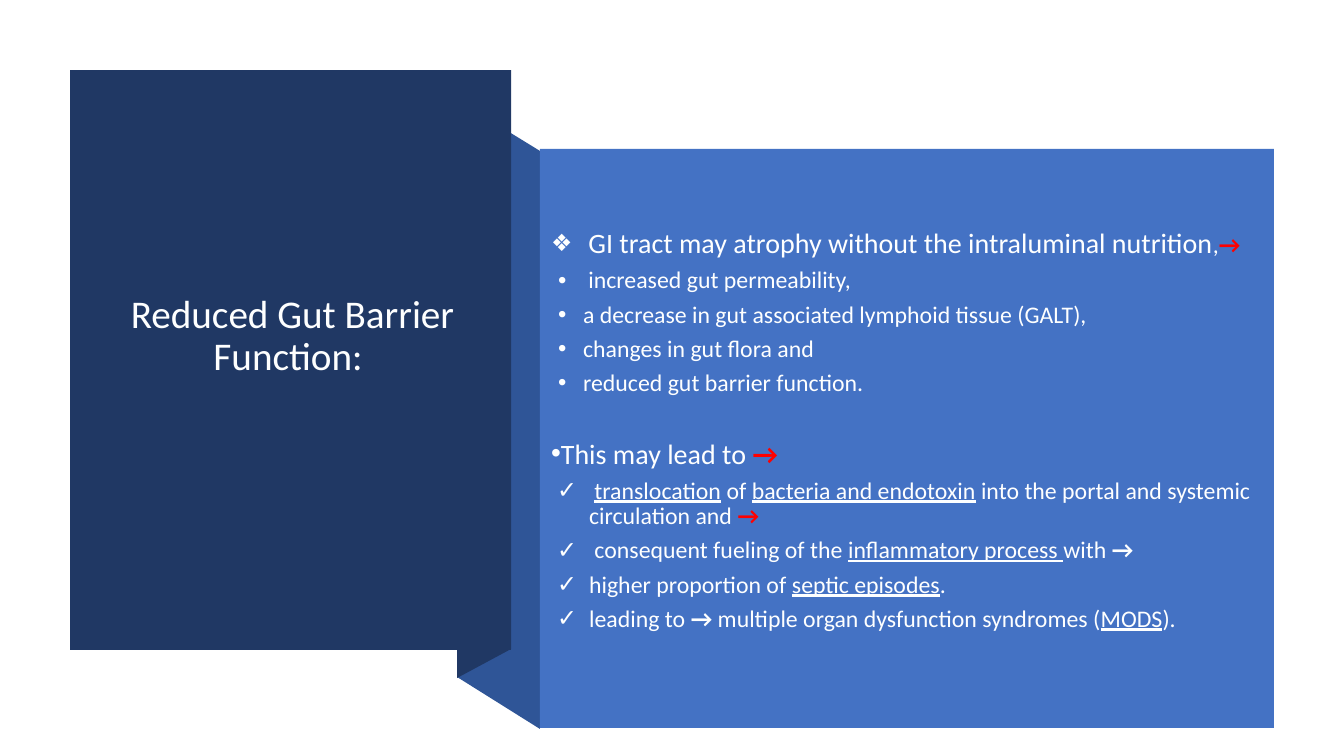
import pptx
import pptx.util
import pptx.dml.color
import pptx.enum.shapes
import pptx.enum.text
from lxml import etree

PX = 914400 / 100.8
FONT = "Calibri"
COLORS = {
    "navy": "203864",
    "fold": "2F5597",
    "panel": "4472C4",
    "text": "FEFFFF",
    "arrow": "FF0000",
}
RUN_STYLES = {
    "plain": {},
    "big": {"size": 20},
    "underline": {"underline": True},
    "bold": {"bold": True},
    "arrow": {"bold": True, "color": "arrow"},
    "big arrow": {"size": 20, "bold": True, "color": "arrow"},
}
# Bullet, left margin and hanging indent in px
HEADING = ("❖", 32, 32)
DOT = ("•", 32, 25)
LEAD = ("•", 0, 0)
CHECK = ("✓", 38, 32)

# Bullet style, space before in points, runs
POINTS = [
    (HEADING, 0, [(" ", "plain"),
                  ("GI tract may atrophy without the intraluminal nutrition", "big"),
                  (",", "plain"), ("→", "arrow")]),
    (DOT, 0, [(" increased gut permeability,", "plain")]),
    (DOT, 0, [("a decrease in gut associated lymphoid tissue (GALT),", "plain")]),
    (DOT, 0, [("changes in gut flora and", "plain")]),
    (DOT, 0, [("reduced gut barrier function.", "plain")]),
    (LEAD, 25, [("This may lead to ", "big"), ("→", "big arrow")]),
    (CHECK, 0, [(" ", "plain"), ("translocation", "underline"), (" of ", "plain"),
                ("bacteria and endotoxin", "underline"),
                (" into the portal and systemic circulation and ", "plain"),
                ("→", "arrow")]),
    (CHECK, 0, [(" consequent fueling of the ", "plain"),
                ("inflammatory process ", "underline"),
                ("with", "plain"), (" →", "bold")]),
    (CHECK, 0, [("higher proportion of ", "plain"),
                ("septic episodes", "underline"), (".", "plain")]),
    (CHECK, 0, [("leading to ", "plain"), ("→ ", "bold"),
                ("multiple organ dysfunction syndromes (", "plain"),
                ("MODS", "underline"), (").", "plain")]),
]


def emu(px):
    return pptx.util.Emu(round(px * PX))


def rgb(name):
    return pptx.dml.color.RGBColor.from_string(COLORS[name])


def paint(sp, color):
    sp.shadow.inherit = False
    sp.fill.solid()
    sp.fill.fore_color.rgb = rgb(color)
    sp.line.fill.background()


def add_rect(s, left, top, width, height, color):
    sp = s.shapes.add_shape(pptx.enum.shapes.MSO_SHAPE.RECTANGLE,
                            emu(left), emu(top), emu(width), emu(height))
    paint(sp, color)


def add_polygon(s, points, color):
    builder = s.shapes.build_freeform(*points[0], scale=PX)
    builder.add_line_segments(points[1:], close=True)
    paint(builder.convert_to_shape(), color)


def place_text(s, sp, left, top, width, height):
    """Move a placeholder in front of the shapes and return its text frame."""
    s.shapes._spTree.append(sp._element)
    sp.left, sp.top, sp.width, sp.height = map(emu, (left, top, width, height))
    tf = sp.text_frame
    tf.word_wrap = True
    tf.auto_size = pptx.enum.text.MSO_AUTO_SIZE.NONE
    tf.vertical_anchor = pptx.enum.text.MSO_ANCHOR.MIDDLE
    return tf


def format_paragraph(p, size, before=0):
    p.font.name = FONT
    p.font.size = pptx.util.Pt(size)
    p.font.color.rgb = rgb("text")
    p.line_spacing = 0.9
    p.space_before = pptx.util.Pt(before)
    p.space_after = pptx.util.Pt(6)


def set_bullet(p, char, margin, hanging):
    pPr = p._p.get_or_add_pPr()
    pPr.set("marL", str(emu(margin)))
    pPr.set("indent", str(-emu(hanging)))
    bullet = etree.Element(pptx.oxml.ns.qn("a:buChar"), char=char)
    pPr.find(pptx.oxml.ns.qn("a:defRPr")).addprevious(bullet)


def add_run(p, text, size=None, bold=None, underline=None, color=None):
    r = p.add_run()
    r.text = text
    r.font.bold = bold
    r.font.underline = underline
    if size:
        r.font.size = pptx.util.Pt(size)
    if color:
        r.font.color.rgb = rgb(color)


def fill_title(s):
    tf = place_text(s, s.shapes.title, 87, 289, 411, 96)
    p = tf.paragraphs[0]
    p.alignment = pptx.enum.text.PP_ALIGN.CENTER
    format_paragraph(p, 28)
    add_run(p, "Reduced Gut Barrier Function: ")


def fill_points(s):
    tf = place_text(s, s.placeholders[1], 541, 149, 734, 564)
    for i, (bullet, before, runs) in enumerate(POINTS):
        p = tf.add_paragraph() if i else tf.paragraphs[0]
        format_paragraph(p, 17, before)
        set_bullet(p, *bullet)
        for text, style in runs:
            add_run(p, text, **RUN_STYLES[style])


def main():
    prs = pptx.Presentation()
    prs.slide_width, prs.slide_height = emu(1344), emu(756)
    s = prs.slides.add_slide(prs.slide_layouts[1])
    add_polygon(s, [(540, 729), (457, 677), (457, 100), (540, 151)], "fold")
    add_polygon(s, [(511, 649), (457, 678), (457, 99), (511, 70)], "navy")
    add_rect(s, 70, 70, 441, 580, "navy")
    add_rect(s, 540, 149, 734, 579, "panel")
    fill_title(s)
    fill_points(s)
    prs.save("out.pptx")


if __name__ == "__main__":
    main()
